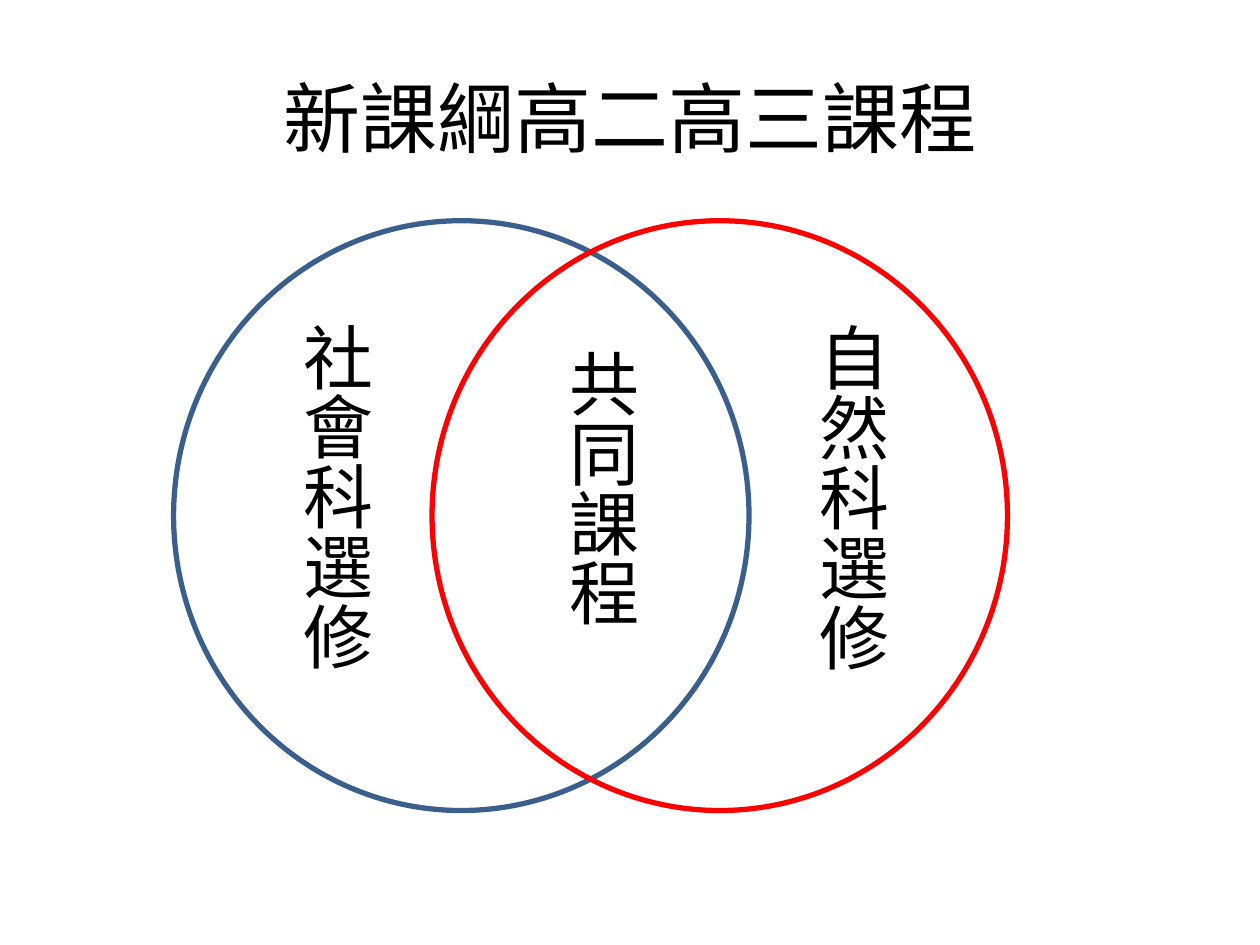
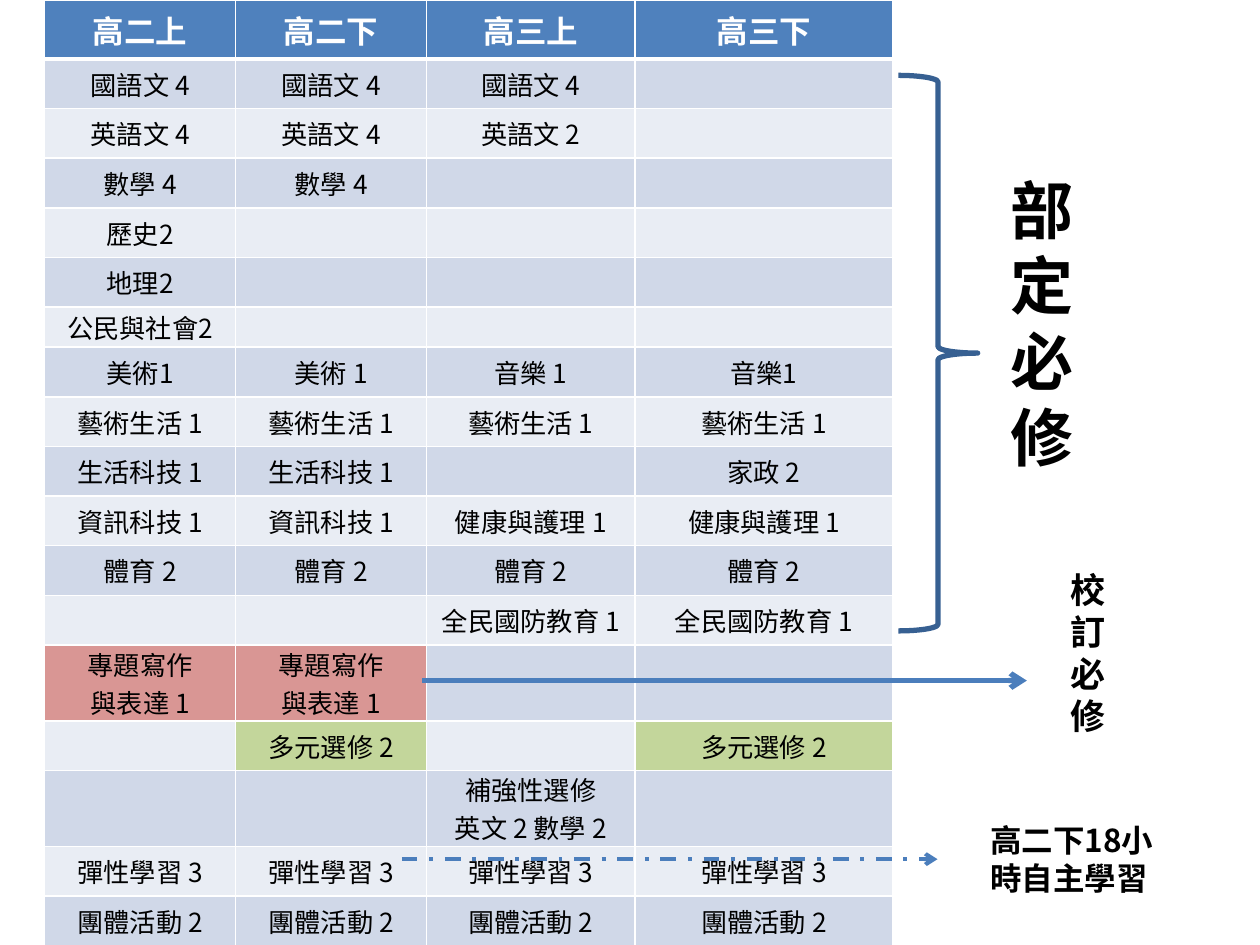
from lxml import etree
from pptx import Presentation
from pptx.dml.color import RGBColor
from pptx.enum.dml import MSO_LINE
from pptx.enum.shapes import MSO_CONNECTOR, MSO_SHAPE
from pptx.enum.text import MSO_ANCHOR, MSO_AUTO_SIZE, PP_ALIGN
from pptx.oxml.ns import qn
from pptx.util import Cm, Pt

CENTER, LEFT = PP_ALIGN.CENTER, PP_ALIGN.LEFT
MIDDLE = MSO_ANCHOR.MIDDLE
STRAIGHT = MSO_CONNECTOR.STRAIGHT
CIRCLE, BRACE = MSO_SHAPE.FLOWCHART_CONNECTOR, MSO_SHAPE.RIGHT_BRACE
DASH_DOT, SOLID = MSO_LINE.DASH_DOT, MSO_LINE.SOLID
FIT = MSO_AUTO_SIZE.SHAPE_TO_FIT_TEXT
CJK, LATIN = "Noto Sans CJK SC", "Calibri"
BLACK, WHITE = "000000", "FFFFFF"
HEADER, BANDS = "4F81BD", ("E9EDF4", "D0D8E8")
PINK, GREEN = "D99694", "C3D69B"
BLUE, RED, NAVY, ARROW = "3A5F8C", "FF0000", "376092", "4B7EBC"

rgb = RGBColor.from_string


def write(tf, text, size, color=BLACK, bold=False, align=CENTER, latin=CJK, ea=LATIN):
    for i, line in enumerate(text.split("\n")):
        p = tf.paragraphs[0] if i == 0 else tf.add_paragraph()
        p.alignment = align
        r = p.add_run()
        r.text = line
        r.font.size, r.font.bold, r.font.name = Pt(size), bold, latin
        r.font.color.rgb = rgb(color)
        etree.SubElement(r.font._element, qn("a:ea"), typeface=ea)


prs = Presentation()
prs.slide_width, prs.slide_height = Cm(25.4), Cm(19.05)
blank = prs.slide_layouts[6]

s = prs.slides.add_slide(blank)
tf = s.shapes.add_textbox(Cm(1.27), Cm(0.76), Cm(22.86), Cm(3.18)).text_frame
tf.word_wrap, tf.vertical_anchor = True, MIDDLE
write(tf, "新課綱高二高三課程", 44)

for left, color in ((3.5, BLUE), (8.71, RED)):
    sp = s.shapes.add_shape(CIRCLE, Cm(left), Cm(4.45), Cm(11.6), Cm(11.89))
    sp.shadow.inherit = False
    sp.fill.background()
    sp.line.color.rgb, sp.line.width = rgb(color), Pt(3)

for text, left, top, height in (
    ("共同課程", 10.87, 6.78, 7.19),
    ("社會科選修", 5.51, 6.25, 8.31),
    ("自然科選修", 15.9, 6.27, 8.31),
):
    tf = s.shapes.add_textbox(Cm(left), Cm(top), Cm(2.24), Cm(height)).text_frame
    tf.auto_size = FIT
    tf._txBody.bodyPr.set("vert", "eaVert")
    write(tf, text, 40)

s = prs.slides.add_slide(blank)
rows = [
    ("高二上", "高二下", "高三上", "高三下"),
    ("國語文 4", "國語文 4", "國語文 4", ""),
    ("英語文 4", "英語文 4", "英語文 2", ""),
    ("數學 4", "數學 4", "", ""),
    ("歷史2", "", "", ""),
    ("地理2", "", "", ""),
    ("公民與社會2", "", "", ""),
    ("美術1", "美術 1", "音樂 1", "音樂1"),
    ("藝術生活 1",) * 4,
    ("生活科技 1", "生活科技 1", "", "家政 2"),
    ("資訊科技 1", "資訊科技 1", "健康與護理 1", "健康與護理 1"),
    ("體育 2",) * 4,
    ("", "", "全民國防教育 1", "全民國防教育 1"),
    ("專題寫作\n與表達 1", "專題寫作\n與表達 1", "", ""),
    ("", "多元選修 2", "", "多元選修 2"),
    ("", "", "補強性選修\n英文 2 數學 2", ""),
    ("彈性學習 3",) * 4,
    ("團體活動 2",) * 4,
]
heights = {0: 1.19, 6: 0.81, 13: 1.53, 15: 1.53}
table = s.shapes.add_table(len(rows), 4, Cm(0.9), Cm(0), Cm(17.1), Cm(19.05)).table
for col, width in zip(table.columns, (3.85, 3.85, 4.2, 5.2)):
    col.width = Cm(width)

for i, row in enumerate(rows):
    table.rows[i].height = Cm(heights.get(i, 1))
    for j, text in enumerate(row):
        cell = table.cell(i, j)
        cell.margin_left = cell.margin_right = Cm(0.2)
        cell.margin_top = cell.margin_bottom = 0
        cell.vertical_anchor = MIDDLE
        for side in "LRTB":
            thick = (i == 0 and side == "B") or (i == 1 and side == "T")
            ln = etree.SubElement(cell._tc.tcPr, qn("a:ln" + side), w=str(Pt(3 if thick else 1)))
            fill = etree.SubElement(ln, qn("a:solidFill"))
            etree.SubElement(fill, qn("a:srgbClr"), val=WHITE)
        color = HEADER if i == 0 else BANDS[i % 2]
        if text.startswith("專題寫作"):
            color = PINK
        elif text.startswith("多元選修"):
            color = GREEN
        cell.fill.solid()
        cell.fill.fore_color.rgb = rgb(color)
        if i == 0:
            write(cell.text_frame, text, 18, color=WHITE, bold=True, latin=LATIN, ea=CJK)
        elif text:
            write(cell.text_frame, text, 15, ea=CJK)
        else:
            cell.text_frame.paragraphs[0].font.size = Pt(15)

sp = s.shapes.add_shape(BRACE, Cm(18.11), Cm(1.52), Cm(1.6), Cm(11.2))
sp.shadow.inherit = False
sp.fill.background()
sp.line.color.rgb, sp.line.width = rgb(NAVY), Pt(3)

for x1, x2, y, width, dash in (
    (8.51, 20.7, 13.72, 3, SOLID),
    (8.1, 18.9, 17.32, 2.25, DASH_DOT),
):
    sp = s.shapes.add_connector(STRAIGHT, Cm(x1), Cm(y), Cm(x2), Cm(y))
    sp.line.color.rgb, sp.line.width = rgb(ARROW), Pt(width)
    sp.line.dash_style = dash
    etree.SubElement(sp.line._get_or_add_ln(), qn("a:tailEnd"), type="arrow")
    etree.SubElement(sp._element.spPr, qn("a:effectLst"))

for text, size, left, top, width, height in (
    ("部定必修", 36, 20.12, 3.33, 1.8, 6.4),
    ("校訂必修", 20, 21.34, 11.33, 1.17, 3.68),
    ("高二下18小時自主學習", 18, 19.71, 16.43, 4.39, 1.8),
):
    tf = s.shapes.add_textbox(Cm(left), Cm(top), Cm(width), Cm(height)).text_frame
    tf.word_wrap, tf.auto_size = True, FIT
    write(tf, text, size, bold=True, align=LEFT)

prs.save("out.pptx")
